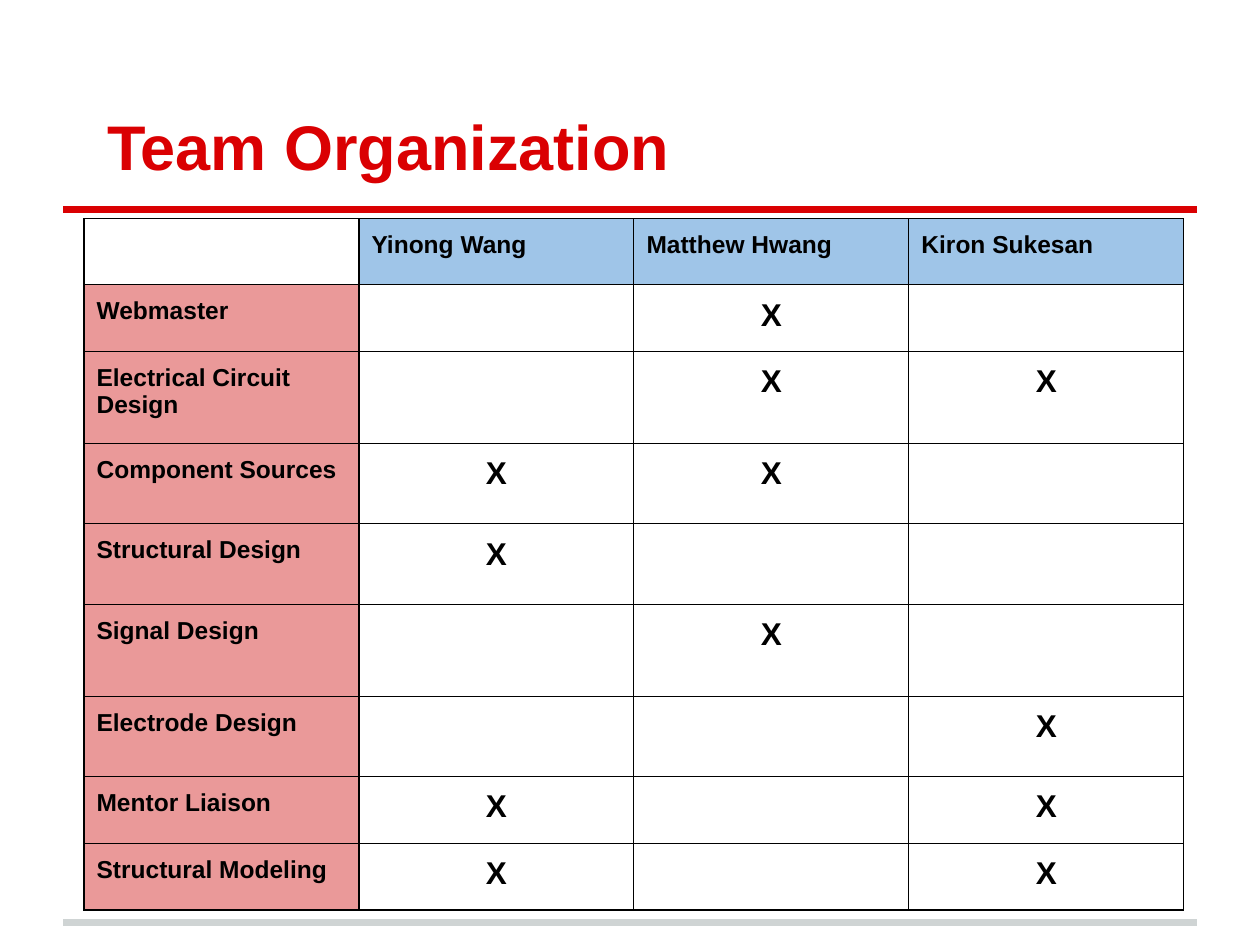
from dataclasses import dataclass

from lxml import etree
from pptx import Presentation
from pptx.dml.color import RGBColor
from pptx.enum import shapes, text
from pptx.oxml import ns
from pptx.util import Pt

FONT = "Arial"
RED, GREY, BLACK, WHITE = "DA0002", "CFD4D4", "000000", "FFFFFF"
BLUE, PINK = "9FC5E8", "EA9999"
INSET = 7.2
LEFT, TOP, COL = 48, 125, 157.14


@dataclass
class Rule:
    y: float
    color: str


@dataclass
class Duty:
    name: str
    height: float
    marks: str  # one sign per member, X where the member takes part


RULES = [Rule(527, GREY), Rule(120, RED)]
TEAM = ["Yinong Wang", "Matthew Hwang", "Kiron Sukesan"]
HEAD = 37.8
DUTIES = [
    Duty("Webmaster", 38.1, "-X-"),
    Duty("Electrical Circuit Design", 52.5, "-XX"),
    Duty("Component Sources", 46, "XX-"),
    Duty("Structural Design", 46, "X--"),
    Duty("Signal Design", 52.5, "-X-"),
    Duty("Electrode Design", 46, "--X"),
    Duty("Mentor Liaison", 38.1, "X-X"),
    Duty("Structural Modeling", 38.1, "X-X"),
]


def rgb(code: str) -> RGBColor:
    return RGBColor.from_string(code)


def pad(item) -> None:
    """Set the same inset on all sides of a cell or text frame."""
    item.margin_left = item.margin_right = Pt(INSET)
    item.margin_top = item.margin_bottom = Pt(INSET)


def add_run(para, words: str, size: float, color: str = BLACK) -> None:
    run = para.add_run()
    run.text = words
    font = run.font
    font.name, font.size, font.bold = FONT, Pt(size), True
    font.color.rgb = rgb(color)


def draw_rule(slide, rule: Rule) -> None:
    line = slide.shapes.add_connector(
        shapes.MSO_CONNECTOR.STRAIGHT, Pt(36), Pt(rule.y), Pt(684), Pt(rule.y))
    line.line.color.rgb = rgb(rule.color)
    line.line.width = Pt(4)
    etree.SubElement(line.element.spPr, ns.qn("a:effectLst"))


def draw_title(slide, words: str) -> None:
    title = slide.shapes.title
    title.left, title.top = Pt(36), Pt(21.6)
    title.width, title.height = Pt(648), Pt(90)
    frame = title.text_frame
    pad(frame)
    frame.auto_size = text.MSO_AUTO_SIZE.NONE
    frame.vertical_anchor = text.MSO_ANCHOR.BOTTOM
    para = frame.paragraphs[0]
    para.alignment = text.PP_ALIGN.LEFT
    add_run(para, words, 36, RED)
    props = para._p.get_or_add_pPr()
    props.set("marL", "0")
    props.set("indent", str(Pt(18)))


def add_edges(cell) -> None:
    """Draw thin black lines on the four sides; they precede the fill."""
    props = cell._tc.get_or_add_tcPr()
    for spot, side in enumerate(("lnL", "lnR", "lnT", "lnB")):
        edge = etree.Element(ns.qn("a:" + side), w=str(Pt(0.75)))
        fill = etree.SubElement(edge, ns.qn("a:solidFill"))
        etree.SubElement(fill, ns.qn("a:srgbClr"), val=BLACK)
        props.insert(spot, edge)


def fill_cell(cell, words: str, color: str = "", mark: bool = False) -> None:
    pad(cell)
    if color:
        cell.fill.solid()
        cell.fill.fore_color.rgb = rgb(color)
    else:
        cell.fill.background()
    add_edges(cell)
    if words:
        para = cell.text_frame.paragraphs[0]
        if mark:
            para.alignment = text.PP_ALIGN.CENTER
        add_run(para, words, 18 if mark else 14)


def draw_table(slide) -> None:
    highs = [HEAD] + [duty.height for duty in DUTIES]
    wide = len(TEAM) + 1
    table = slide.shapes.add_table(
        len(highs), wide, Pt(LEFT), Pt(TOP), Pt(COL * wide), Pt(sum(highs))).table
    table.first_row = table.horz_banding = False
    for col in table.columns:
        col.width = Pt(COL)
    for row, high in zip(table.rows, highs):
        row.height = Pt(high)

    # Header row
    fill_cell(table.cell(0, 0), "", WHITE)
    for c, name in enumerate(TEAM, 1):
        fill_cell(table.cell(0, c), name, BLUE)

    # Duties and marks
    for r, duty in enumerate(DUTIES, 1):
        fill_cell(table.cell(r, 0), duty.name, PINK)
        for c, sign in enumerate(duty.marks, 1):
            fill_cell(table.cell(r, c), sign.strip("-"), mark=True)


def main() -> None:
    deck = Presentation()
    deck.slide_width, deck.slide_height = Pt(720), Pt(540)
    slide = deck.slides.add_slide(deck.slide_layouts[5])
    slide.background.fill.solid()
    slide.background.fill.fore_color.rgb = rgb(WHITE)
    for rule in RULES:
        draw_rule(slide, rule)
    draw_title(slide, "Team Organization")
    draw_table(slide)
    deck.save("out.pptx")


if __name__ == "__main__":
    main()
